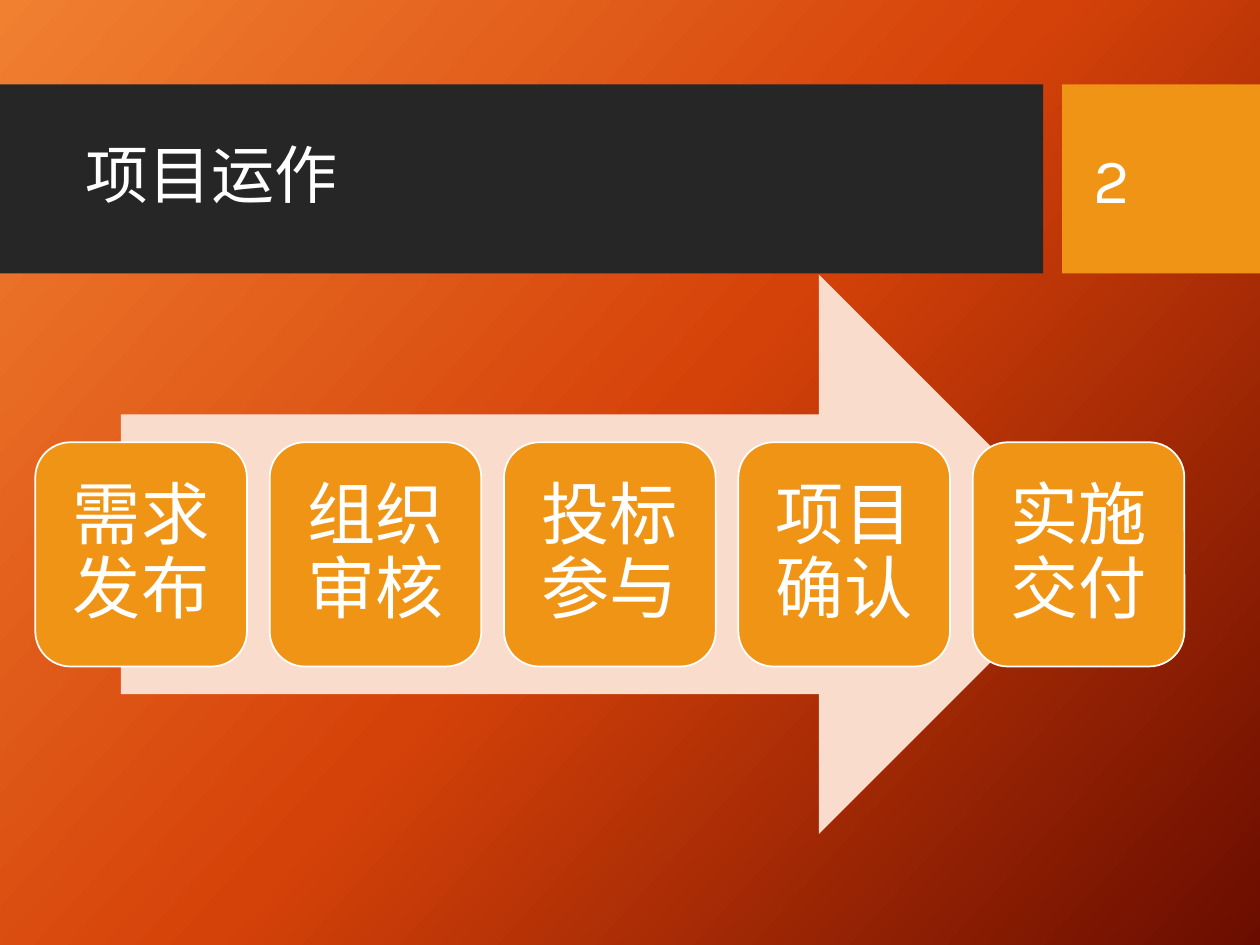
import copy

import pptx
import pptx.util
import pptx.dml.color
import pptx.enum.shapes
import pptx.enum.text

Inches = pptx.util.Inches
Pt = pptx.util.Pt
RGBColor = pptx.dml.color.RGBColor
MSO_SHAPE = pptx.enum.shapes.MSO_SHAPE
PP_ALIGN = pptx.enum.text.PP_ALIGN

WHITE = RGBColor(0xFF, 0xFF, 0xFF)
CHARCOAL = RGBColor(0x26, 0x26, 0x26)
AMBER = RGBColor(0xF0, 0x94, 0x15)
PEACH = RGBColor(0xF9, 0xDC, 0xCC)
BACKGROUND = [
    (0, RGBColor(0xF1, 0x80, 0x31)),
    (0.5, RGBColor(0xD5, 0x42, 0x09)),
    (1, RGBColor(0x6A, 0x0D, 0x00)),
]
FONT = "Karla"
STEPS = ["需求发布", "组织审核", "投标参与", "项目确认", "实施交付"]


def add_block(kind, left, top, width, height, color):
    sp = s.shapes.add_shape(kind, Inches(left), Inches(top), Inches(width), Inches(height))
    sp.shadow.inherit = False
    sp.fill.solid()
    sp.fill.fore_color.rgb = color
    sp.line.fill.background()
    return sp


def write(sp, text, size, align, spacing=0.9):
    tf = sp.text_frame
    tf.text = text
    tf.word_wrap = True
    tf.auto_size = pptx.enum.text.MSO_AUTO_SIZE.NONE
    tf.vertical_anchor = pptx.enum.text.MSO_ANCHOR.MIDDLE
    p = tf.paragraphs[0]
    p.alignment = align
    p.line_spacing = spacing
    r = p.runs[0]
    r.font.name = FONT
    r.font.size = Pt(size)
    r.font.color.rgb = WHITE


prs = pptx.Presentation()
prs.slide_width, prs.slide_height = Inches(10), Inches(7.5)
s = prs.slides.add_slide(prs.slide_layouts[5])

# Background gradient with three stops
fill = s.background.fill
fill.gradient()
fill.gradient_angle = 360 - 42
stop_list = fill._fill._gradFill.gsLst
stop_list.append(copy.deepcopy(stop_list[-1]))
for stop, (position, color) in zip(fill.gradient_stops, BACKGROUND):
    stop.position = position
    stop.color.rgb = color

# Header bands
add_block(MSO_SHAPE.RECTANGLE, 0, 0.67, 8.28, 1.5, CHARCOAL)
add_block(MSO_SHAPE.RECTANGLE, 8.43, 0.67, 1.57, 1.5, AMBER)

# Title, brought in front of its band
title = s.shapes.title
title.left, title.top = Inches(0.58), Inches(0.82)
title.width, title.height = Inches(7.54), Inches(1.18)
s.shapes._spTree.append(title._element)
write(title, "项目运作", 36, PP_ALIGN.LEFT)

# Page number
number = s.shapes.add_textbox(Inches(8.58), Inches(0.82), Inches(1.27), Inches(1.19))
write(number, "2", 36, PP_ALIGN.LEFT, 1.0)

# Process arrow and its steps
add_block(MSO_SHAPE.RIGHT_ARROW, 0.96, 2.18, 7.76, 4.44, PEACH)
for i, step in enumerate(STEPS):
    sp = add_block(MSO_SHAPE.ROUNDED_RECTANGLE, 0.28 + 1.86 * i, 3.51, 1.68, 1.78, AMBER)
    sp.line.color.rgb = WHITE
    sp.line.width = Pt(1)
    write(sp, step, 39, PP_ALIGN.CENTER)
    tf = sp.text_frame
    tf.margin_left = tf.margin_right = tf.margin_top = tf.margin_bottom = Inches(0.16)

prs.save("out.pptx")
